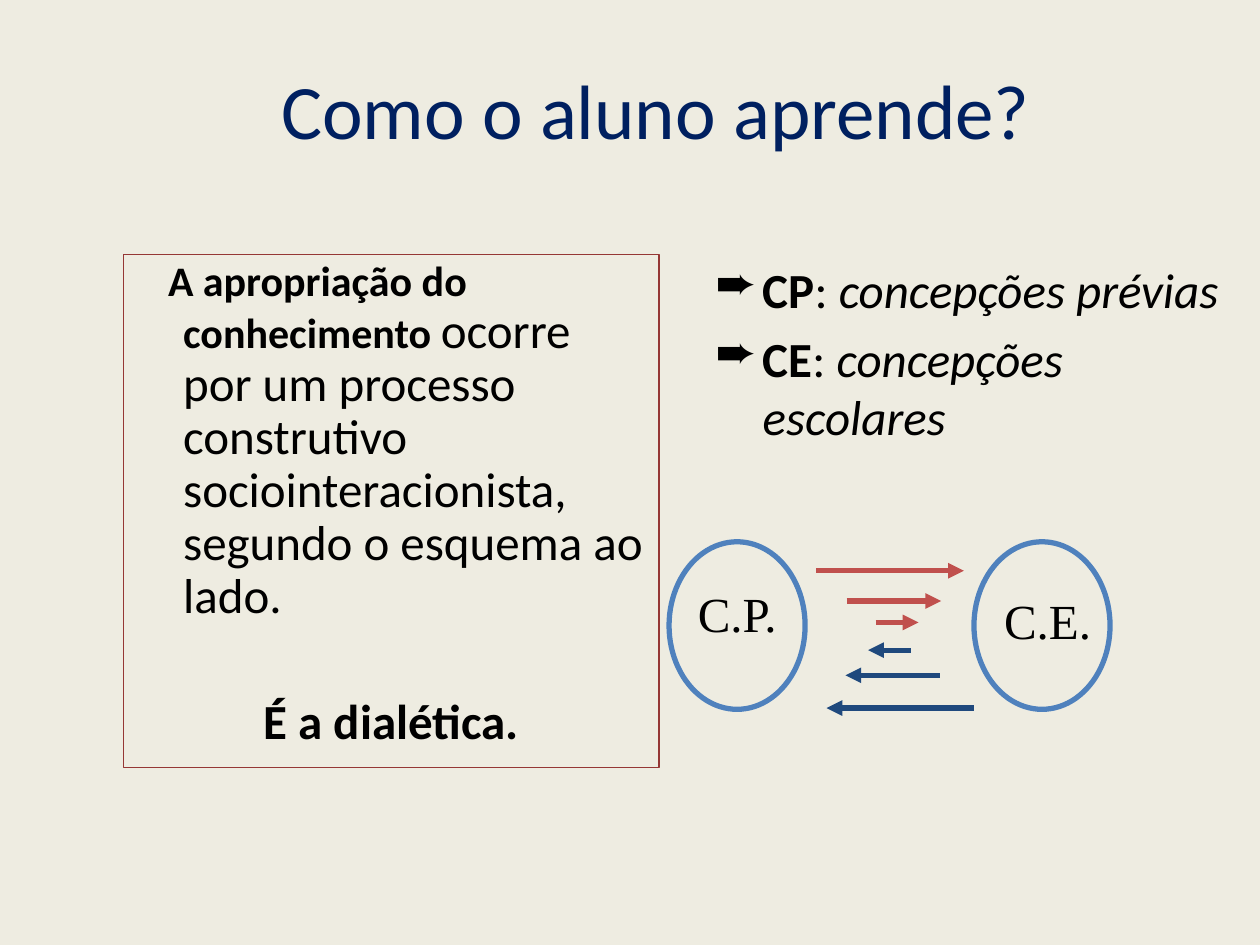
from lxml import etree
from pptx import Presentation
from pptx.dml.color import RGBColor
from pptx.enum.shapes import MSO_CONNECTOR, MSO_SHAPE
from pptx.enum.text import MSO_ANCHOR, PP_ALIGN
from pptx.oxml.ns import qn
from pptx.util import Inches, Pt

CENTER, LEFT = PP_ALIGN.CENTER, PP_ALIGN.LEFT
TOP, MIDDLE = MSO_ANCHOR.TOP, MSO_ANCHOR.MIDDLE
OVAL, RECT = MSO_SHAPE.OVAL, MSO_SHAPE.RECTANGLE
STRAIGHT = MSO_CONNECTOR.STRAIGHT

COLORS = {
    "background": "EEECE1",
    "title": "002060",
    "text": "000000",
    "frame": "953735",
    "circle": "4F81BD",
    "forward": "C0504D",
    "back": "1F497D",
}
COLS, ROWS = 100, 75
SLIDE_W, SLIDE_H = Inches(10), Inches(7.5)
COL, ROW = SLIDE_W / COLS, SLIDE_H / ROWS
HANGING = 3.75  # columns


def rgb(name):
    return RGBColor.from_string(COLORS[name])


def place(box):
    left, top, width, height = box
    return [round(v) for v in (left * COL, top * ROW, width * COL, height * ROW)]


def setup_frame(shape, anchor=TOP):
    tf = shape.text_frame
    tf.word_wrap = True
    tf.vertical_anchor = anchor
    return tf


def style(p, size, font="Calibri", color="text", align=LEFT):
    p.alignment = align
    p.font.size = Pt(size)
    p.font.name = font
    p.font.color.rgb = rgb(color)


def add_run(p, text, bold=False, italic=False, size=None):
    r = p.add_run()
    r.text = text
    r.font.bold, r.font.italic = bold, italic
    if size:
        r.font.size = Pt(size)


def set_indent(p, first, bullet=None):
    pPr = p._p.get_or_add_pPr()
    pPr.set("marL", str(round(HANGING * COL)))
    pPr.set("indent", str(round(first * COL)))
    if bullet:
        bu = etree.Element(qn("a:buChar"), char=bullet)
        pPr.insert_element_before(bu, "a:tabLst", "a:defRPr", "a:extLst")


def add_outline(s, kind, box, color, width):
    sp = s.shapes.add_shape(kind, *place(box))
    sp.shadow.inherit = False
    sp.fill.background()
    sp.line.color.rgb = rgb(color)
    sp.line.width = Pt(width)
    return sp


def add_arrow(s, start, end, row, color):
    x1, x2, y = round(start * COL), round(end * COL), round(row * ROW)
    line = s.shapes.add_connector(STRAIGHT, x1, y, x2, y)
    line.line.color.rgb = rgb(color)
    line.line.width = Pt(3)
    ln = line.line._get_or_add_ln()
    etree.SubElement(ln, qn("a:tailEnd"), type="triangle")
    etree.SubElement(line._element.spPr, qn("a:effectLst"))


def add_title(s, box):
    tf = setup_frame(s.shapes.add_textbox(*place(box)), MIDDLE)
    tf.margin_left = round(2 * COL)
    p = tf.paragraphs[0]
    style(p, 44, color="title", align=CENTER)
    add_run(p, "Como o aluno aprende?")


def add_statement(s, box):
    tf = setup_frame(add_outline(s, RECT, box, "frame", 0.75))
    p = tf.paragraphs[0]
    style(p, 28)
    set_indent(p, -1.2)
    p.line_spacing = 0.9
    add_run(p, "A apropriação do conhecimento ", bold=True, size=24)
    add_run(p, "ocorre por um processo construtivo sociointeracionista, "
               "segundo o esquema ao lado.")
    # Conclusion, set apart from the statement
    p = tf.add_paragraph()
    style(p, 28, align=CENTER)
    set_indent(p, -HANGING)
    p.line_spacing = 0.9
    p.space_before = Pt(42)
    add_run(p, "É a dialética.", bold=True)


def add_glossary(s, box, terms):
    tf = setup_frame(s.shapes.add_textbox(*place(box)))
    tf.margin_top = round(6 * ROW)
    for i, (term, meaning) in enumerate(terms):
        p = tf.add_paragraph() if i else tf.paragraphs[0]
        style(p, 28)
        set_indent(p, -HANGING, "➨")
        if i:
            p.space_before = Pt(5.6)
        add_run(p, term, bold=True)
        add_run(p, ": ")
        add_run(p, meaning, italic=True)


def add_exchange(s, box):
    left, top, width, height = box
    circle_w = 10.8
    # Circles: label, left edge, label offset and label width
    circles = [("C.P.", left, (1.3, 2.8), 9.2),
               ("C.E.", left + width - circle_w, (1.4, 3.4), 10.8)]
    for label, x, (dx, dy), label_w in circles:
        add_outline(s, OVAL, (x, top, circle_w, height), "circle", 3)
        tb = s.shapes.add_textbox(*place((x + dx, top + dy, label_w, 5.7)))
        p = setup_frame(tb).paragraphs[0]
        style(p, 28, "Times New Roman")
        add_run(p, label)
    # Arrows: start, end and row within the box
    arrows = {
        "forward": [(11.7, 23.4, 2.3), (14.1, 21.6, 4.7), (16.4, 19.8, 6.4)],
        "back": [(19.2, 15.8, 8.6), (21.5, 14, 10.6), (24.2, 12.5, 13.2)],
    }
    for color, rows in arrows.items():
        for start, end, row in rows:
            add_arrow(s, left + start, left + end, top + row, color)


def main():
    prs = Presentation()
    prs.slide_width, prs.slide_height = SLIDE_W, SLIDE_H
    s = prs.slides.add_slide(prs.slide_layouts[6])
    s.background.fill.solid()
    s.background.fill.fore_color.rgb = rgb("background")

    add_statement(s, (9.8, 20.2, 42.5, 40.7))
    add_glossary(s, (55.8, 14.6, 43, 48), [("CP", "concepções prévias"),
                                           ("CE", "concepções escolares")])
    add_title(s, (10.3, 3.6, 82.5, 10))
    add_exchange(s, (53.1, 43, 35, 13.3))
    prs.save("out.pptx")


if __name__ == "__main__":
    main()
